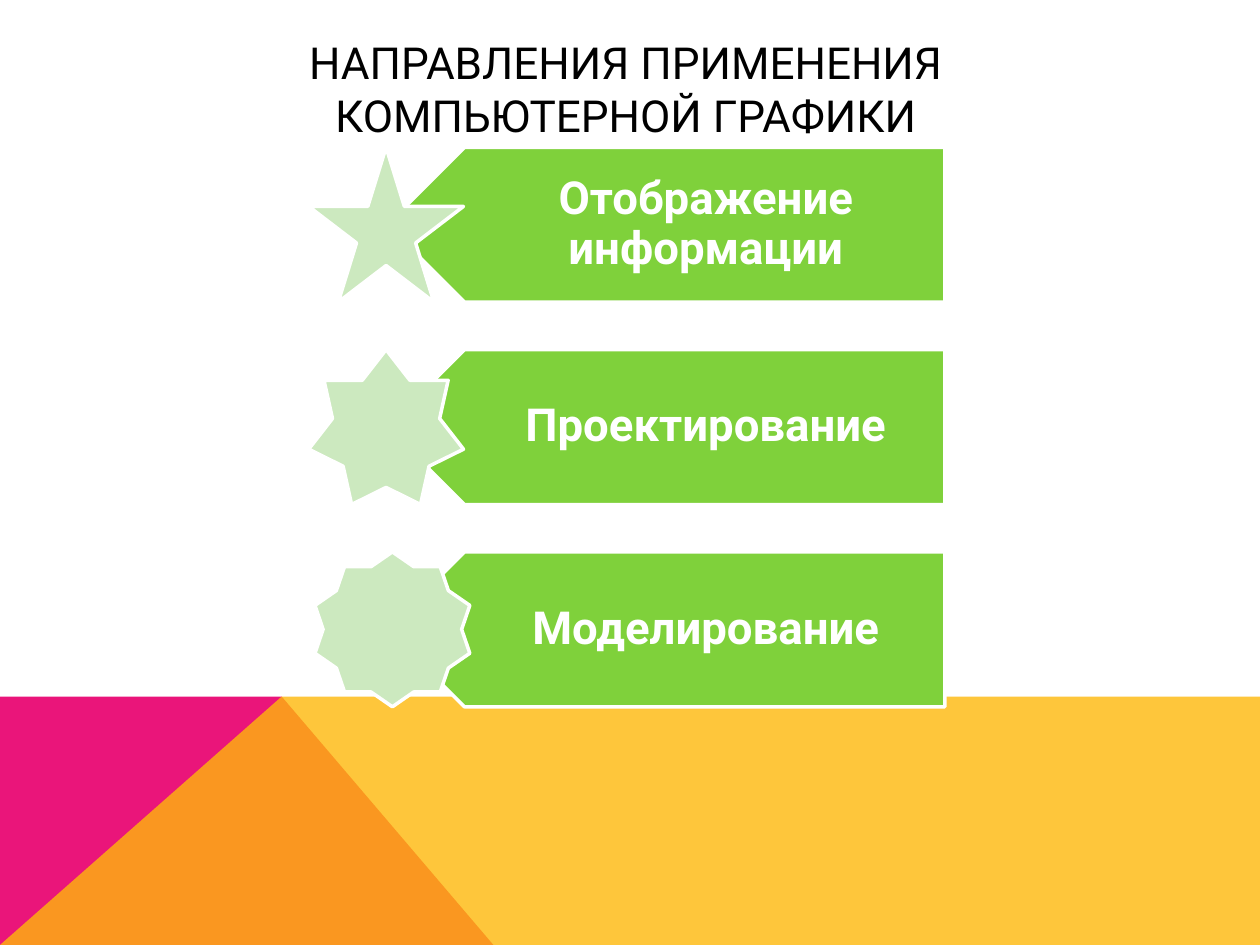
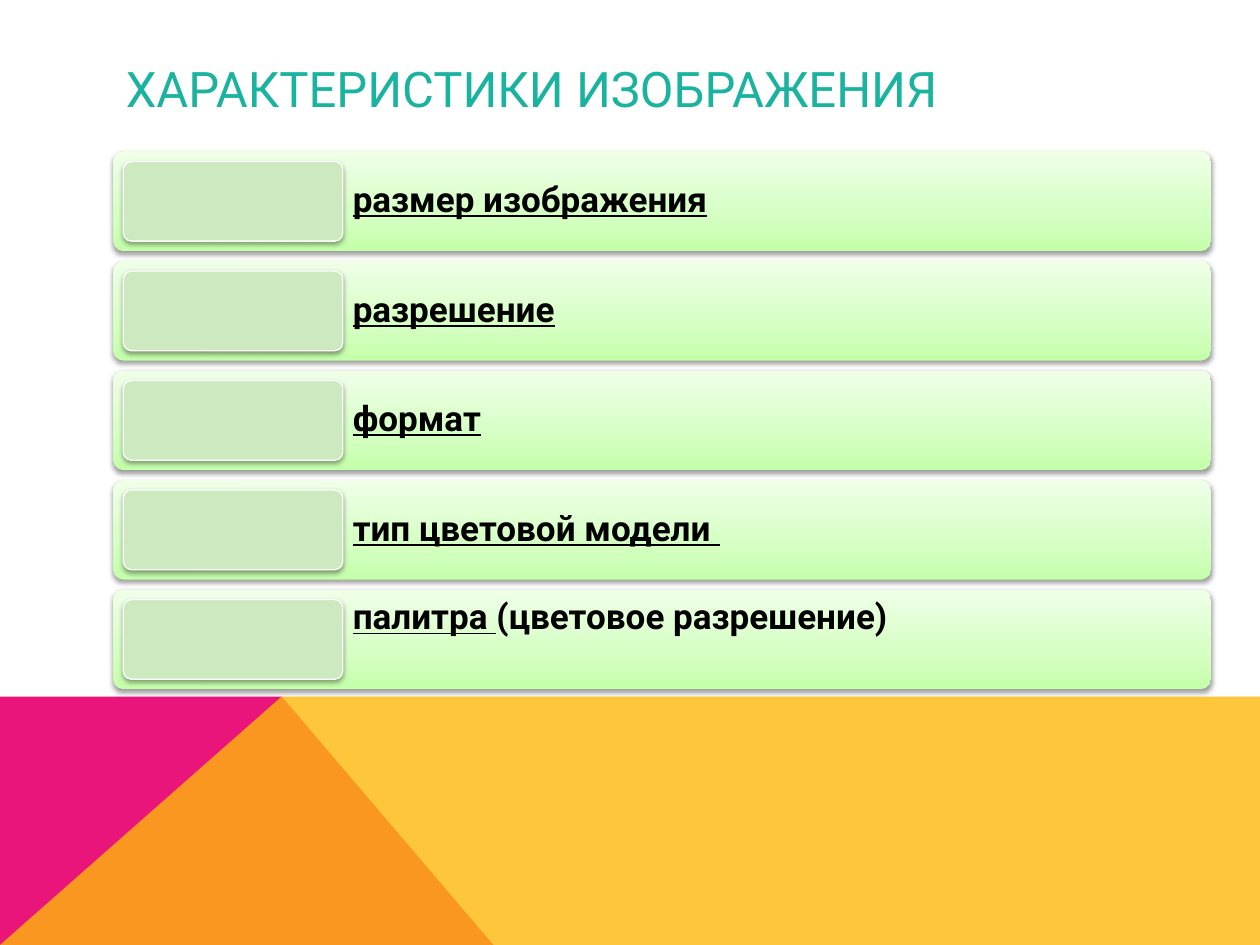
from copy import deepcopy
from typing import NamedTuple

from lxml import etree
from pptx import Presentation
from pptx.dml.color import RGBColor
from pptx.enum.shapes import MSO_SHAPE
from pptx.enum.text import MSO_ANCHOR, PP_ALIGN
from pptx.oxml.ns import qn
from pptx.shapes.autoshape import Shape
from pptx.slide import Slide
from pptx.util import Pt

PENTAGON, ROUNDED = MSO_SHAPE.PENTAGON, MSO_SHAPE.ROUNDED_RECTANGLE
STAR_5, STAR_7, STAR_10 = (
    MSO_SHAPE.STAR_5_POINT, MSO_SHAPE.STAR_7_POINT, MSO_SHAPE.STAR_10_POINT)
LEFT, CENTER = PP_ALIGN.LEFT, PP_ALIGN.CENTER
TOP, MIDDLE = MSO_ANCHOR.TOP, MSO_ANCHOR.MIDDLE

FONT = "Roboto"
COLORS = {
    "white": "FFFFFF",
    "black": "000000",
    "teal": "1AB39F",
    "pink": "EA157A",
    "yellow": "FEB80A",
    "green": "7FD13B",
    "pale green": "CCE9BF",
    "bar bottom": "C4FFAA",
    "bar middle": "D5FFC3",
    "bar top": "EFFFE8",
}
BAR_STOPS = [(0, "bar bottom"), (0.35, "bar middle"), (1, "bar top")]

WIDTH, HEIGHT = 720, 540
BAND_TOP, BAND_PEAK, BAND_FOOT = 397.6, 160.6, 281.5


class Box(NamedTuple):
    left: float
    top: float
    width: float
    height: float


class Run(NamedTuple):
    text: str
    underline: bool = False


class Direction(NamedTuple):
    text: str
    star: MSO_SHAPE
    star_left: float


class Characteristic(NamedTuple):
    runs: list[Run]
    anchor: MSO_ANCHOR = MIDDLE


TITLE_BOX = Box(64.8, 28.8, 591.84, 43.2)

DIRECTIONS = [
    Direction("Отображение информации", STAR_5, 176.4),
    Direction("Проектирование", STAR_7, 176.4),
    Direction("Моделирование", STAR_10, 180),
]
DIRECTION_TOP, DIRECTION_STEP, DIRECTION_HEIGHT = 84.2, 115.6, 88.5

CHARACTERISTICS = [
    Characteristic([Run("размер изображения", True)]),
    Characteristic([Run("разрешение", True)]),
    Characteristic([Run("формат", True)]),
    Characteristic([Run("тип цветовой модели ", True)]),
    Characteristic([Run("палитра ", True), Run("(цветовое разрешение)")], TOP),
]
BAR = Box(64.8, 86.6, 627.1, 56.9)
BAR_STEP, BAR_PADDING, TAB_WIDTH = 62.58, 5.7, 125.4


def rgb(color: str) -> RGBColor:
    return RGBColor.from_string(COLORS[color])


def add_text(slide: Slide, box: Box, runs: list[Run], *, size: float, color: str,
             bold: bool = False, align: PP_ALIGN = LEFT, anchor: MSO_ANCHOR = MIDDLE,
             insets: tuple[float, float, float, float] = (7.2, 3.6, 7.2, 3.6),
             line_spacing: float = 1.0) -> None:
    """Add a one-paragraph text box; a newline in a run is a line break."""
    frame = slide.shapes.add_textbox(*map(Pt, box)).text_frame
    frame.word_wrap = True
    frame.vertical_anchor = anchor
    (frame.margin_left, frame.margin_top,
     frame.margin_right, frame.margin_bottom) = map(Pt, insets)
    paragraph = frame.paragraphs[0]
    paragraph.alignment = align
    paragraph.line_spacing = line_spacing
    for part in runs:
        for index, line in enumerate(part.text.split("\n")):
            if index:
                paragraph.add_line_break()
            run = paragraph.add_run()
            run.text = line
            run.font.name = FONT
            run.font.size = Pt(size)
            run.font.bold = bold
            run.font.underline = part.underline
            run.font.color.rgb = rgb(color)


def paint(shape: Shape, fill: str, line_width: float = 0) -> None:
    """Give a flat fill and a white outline, or none at zero width."""
    shape.shadow.inherit = False
    shape.fill.solid()
    shape.fill.fore_color.rgb = rgb(fill)
    if line_width:
        shape.line.color.rgb = rgb("white")
        shape.line.width = Pt(line_width)
    else:
        shape.line.fill.background()


def add_shape(slide: Slide, kind: MSO_SHAPE, box: Box, fill: str,
              line_width: float = 0) -> Shape:
    shape = slide.shapes.add_shape(kind, *map(Pt, box))
    paint(shape, fill, line_width)
    return shape


def fill_with_gradient(shape: Shape, stops: list[tuple[float, str]]) -> None:
    shape.fill.gradient()
    shape.fill.gradient_angle = 90
    stop_list = shape._element.spPr.find(".//" + qn("a:gsLst"))
    while len(stop_list) < len(stops):
        stop_list.append(deepcopy(stop_list[0]))
    for stop, (position, color) in zip(shape.fill.gradient_stops, stops):
        stop.position = position
        stop.color.rgb = rgb(color)


def add_shadow(shape: Shape) -> None:
    effects = shape._element.spPr.find(qn("a:effectLst"))
    shadow = etree.SubElement(effects, qn("a:outerShdw"), blurRad=str(Pt(3.1)),
                              dist=str(Pt(1.6)), dir="5400000", rotWithShape="0")
    color = etree.SubElement(shadow, qn("a:srgbClr"), val=COLORS["black"])
    etree.SubElement(color, qn("a:alpha"), val="38000")


def add_rounded(slide: Slide, box: Box, fill: str, line_width: float = 0) -> Shape:
    shape = add_shape(slide, ROUNDED, box, fill, line_width)
    shape.adjustments[0] = 0.1
    add_shadow(shape)
    return shape


def add_polygon(slide: Slide, points: list[tuple[float, float]], fill: str) -> Shape:
    builder = slide.shapes.build_freeform(*points[0], scale=Pt(1))
    builder.add_line_segments(points[1:], close=True)
    shape = builder.convert_to_shape()
    paint(shape, fill)
    return shape


def add_bottom_band(slide: Slide) -> None:
    add_polygon(slide, [(0, HEIGHT), (0, BAND_TOP), (BAND_PEAK, BAND_TOP),
                        (BAND_FOOT, HEIGHT)], "pink")
    yellow = add_polygon(slide, [(0, HEIGHT), (BAND_PEAK, BAND_TOP),
                                 (WIDTH, BAND_TOP), (WIDTH, HEIGHT)], "yellow")
    color = yellow._element.spPr.find(qn("a:solidFill"))[0]
    etree.SubElement(color, qn("a:alpha"), val="80000")


def add_slide(presentation: Presentation, title: str, *, size: float, color: str,
              align: PP_ALIGN = LEFT) -> Slide:
    slide = presentation.slides.add_slide(presentation.slide_layouts[6])
    add_bottom_band(slide)
    add_text(slide, TITLE_BOX, [Run(title)], size=size, color=color, align=align)
    return slide


def add_direction(slide: Slide, direction: Direction, top: float) -> None:
    height = DIRECTION_HEIGHT
    arrow = add_shape(slide, PENTAGON, Box(221.2, top, 318.7, height), "green", 2)
    arrow.rotation = 180
    add_text(slide, Box(242.8, top, 296.8, height), [Run(direction.text)],
             size=26, color="white", bold=True, align=CENTER,
             insets=(38.9, 7.9, 14.4, 7.9), line_spacing=0.9)
    add_shape(slide, direction.star, Box(direction.star_left, top, height, height),
              "pale green", 2)


def add_characteristic(slide: Slide, item: Characteristic, top: float) -> None:
    bar = add_rounded(slide, BAR._replace(top=top), "bar middle")
    fill_with_gradient(bar, BAR_STOPS)
    text_offset = BAR_PADDING + TAB_WIDTH
    add_text(slide, Box(BAR.left + text_offset, top, BAR.width - text_offset, BAR.height),
             item.runs, size=20, color="black", bold=True, anchor=item.anchor,
             insets=(BAR_PADDING,) * 4, line_spacing=0.9)
    add_rounded(slide, Box(BAR.left + BAR_PADDING, top + BAR_PADDING, TAB_WIDTH,
                           BAR.height - 2 * BAR_PADDING), "pale green", 0.75)


def main() -> None:
    presentation = Presentation()
    presentation.slide_width, presentation.slide_height = Pt(WIDTH), Pt(HEIGHT)

    slide = add_slide(presentation, "НАПРАВЛЕНИЯ ПРИМЕНЕНИЯ \nКОМПЬЮТЕРНОЙ ГРАФИКИ ",
                      size=25.2, color="black", align=CENTER)
    for index, direction in enumerate(DIRECTIONS):
        add_direction(slide, direction, DIRECTION_TOP + index * DIRECTION_STEP)

    slide = add_slide(presentation, "ХАРАКТЕРИСТИКИ ИЗОБРАЖЕНИЯ", size=28, color="teal")
    for index, item in enumerate(CHARACTERISTICS):
        add_characteristic(slide, item, BAR.top + index * BAR_STEP)

    presentation.save("out.pptx")


if __name__ == "__main__":
    main()
